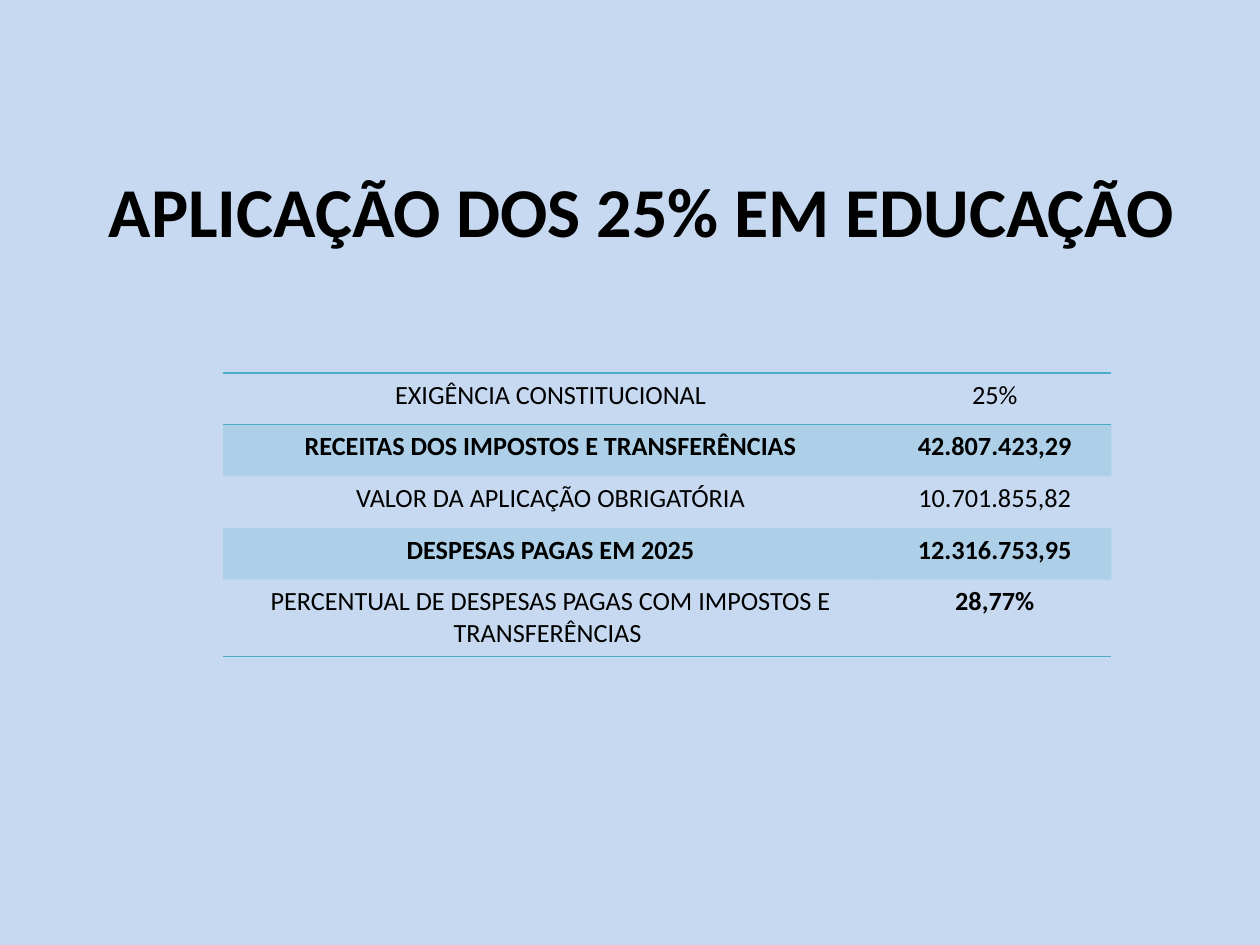
"""Build the slide on the 25% share spent on education."""
from typing import NamedTuple

from lxml import etree
from pptx import Presentation
from pptx.dml.color import RGBColor
from pptx.enum.text import MSO_ANCHOR, PP_ALIGN
from pptx.oxml.ns import qn
from pptx.util import Inches, Pt

CENTER = PP_ALIGN.CENTER
MIDDLE = MSO_ANCHOR.MIDDLE
FONT = "Calibri"
BLACK = "000000"
WHITE = "FFFFFF"
TEAL = "4BACC6"
SKY = "C6D9F1"
PLAIN = "{2D5ABB26-0587-4C30-8999-92F81FD0307C}"
WIDTHS = (5.2, 1.85)
HEIGHT = 0.41


class Row(NamedTuple):
    label: str
    value: str
    bold: tuple = (False, False)
    band: bool = False
    edges: tuple = ()


ROWS = (
    Row("EXIGÊNCIA CONSTITUCIONAL", "25%", edges=("lnT", "lnB")),
    Row("RECEITAS DOS IMPOSTOS E TRANSFERÊNCIAS", "42.807.423,29", (True, True), True),
    Row("VALOR DA APLICAÇÃO OBRIGATÓRIA", "10.701.855,82"),
    Row("DESPESAS PAGAS EM 2025", "12.316.753,95", (True, True), True),
    Row("PERCENTUAL DE DESPESAS PAGAS COM IMPOSTOS E TRANSFERÊNCIAS ", "28,77%",
        (False, True), edges=("lnB",)),
)


def paint(color, code: str) -> None:
    color.rgb = RGBColor.from_string(code)


def write(frame, text: str, size: float, bold: bool) -> None:
    frame.text = text
    para = frame.paragraphs[0]
    para.alignment = CENTER
    font = para.runs[0].font
    font.name, font.size, font.bold = FONT, Pt(size), bold
    paint(font.color, BLACK)


def line(tag: str, code: str, width: float):
    node = etree.Element(qn(f"a:{tag}"), w=str(Pt(width)))
    fill = etree.SubElement(node, qn("a:solidFill"))
    etree.SubElement(fill, qn("a:srgbClr"), val=code)
    return node


def add_title(slide) -> None:
    title = slide.shapes.title
    title.left, title.top = Inches(0.59), Inches(0.76)
    title.width, title.height = Inches(9), Inches(1.81)
    frame = title.text_frame
    frame.word_wrap = True
    frame.vertical_anchor = MIDDLE
    write(frame, "APLICAÇÃO DOS 25% EM EDUCAÇÃO", 40, True)
    props = frame.paragraphs[0].runs[0]._r.get_or_add_rPr()
    props.insert(0, line("ln", WHITE, 0.75))


def fill_cell(cell, text: str, bold: bool, row: Row) -> None:
    write(cell.text_frame, text, 15, bold)
    props = cell._tc.get_or_add_tcPr()
    for edge in row.edges:
        props.append(line(edge, TEAL, 1))
    if not row.band:
        cell.fill.background()
        return
    cell.fill.solid()
    paint(cell.fill.fore_color, TEAL)
    tint = props.find(qn("a:solidFill")).find(qn("a:srgbClr"))
    etree.SubElement(tint, qn("a:alpha"), val="20000")


def add_grid(slide) -> None:
    table = slide.shapes.add_table(
        len(ROWS), len(WIDTHS), Inches(1.77), Inches(2.96),
        Inches(sum(WIDTHS)), Inches(HEIGHT * len(ROWS))).table
    table.first_row = table.horz_banding = False
    table._tbl.tblPr.find(qn("a:tableStyleId")).text = PLAIN
    for col, width in zip(table.columns, WIDTHS):
        col.width = Inches(width)
    for i, row in enumerate(ROWS):
        table.rows[i].height = Inches(HEIGHT)
        for j, text in enumerate((row.label, row.value)):
            fill_cell(table.cell(i, j), text, row.bold[j], row)


def main() -> None:
    deck = Presentation()
    deck.slide_width, deck.slide_height = Inches(10), Inches(7.5)
    slide = deck.slides.add_slide(deck.slide_layouts[5])
    back = slide.background.fill
    back.solid()
    paint(back.fore_color, SKY)
    add_title(slide)
    add_grid(slide)
    deck.save("out.pptx")


if __name__ == "__main__":
    main()
